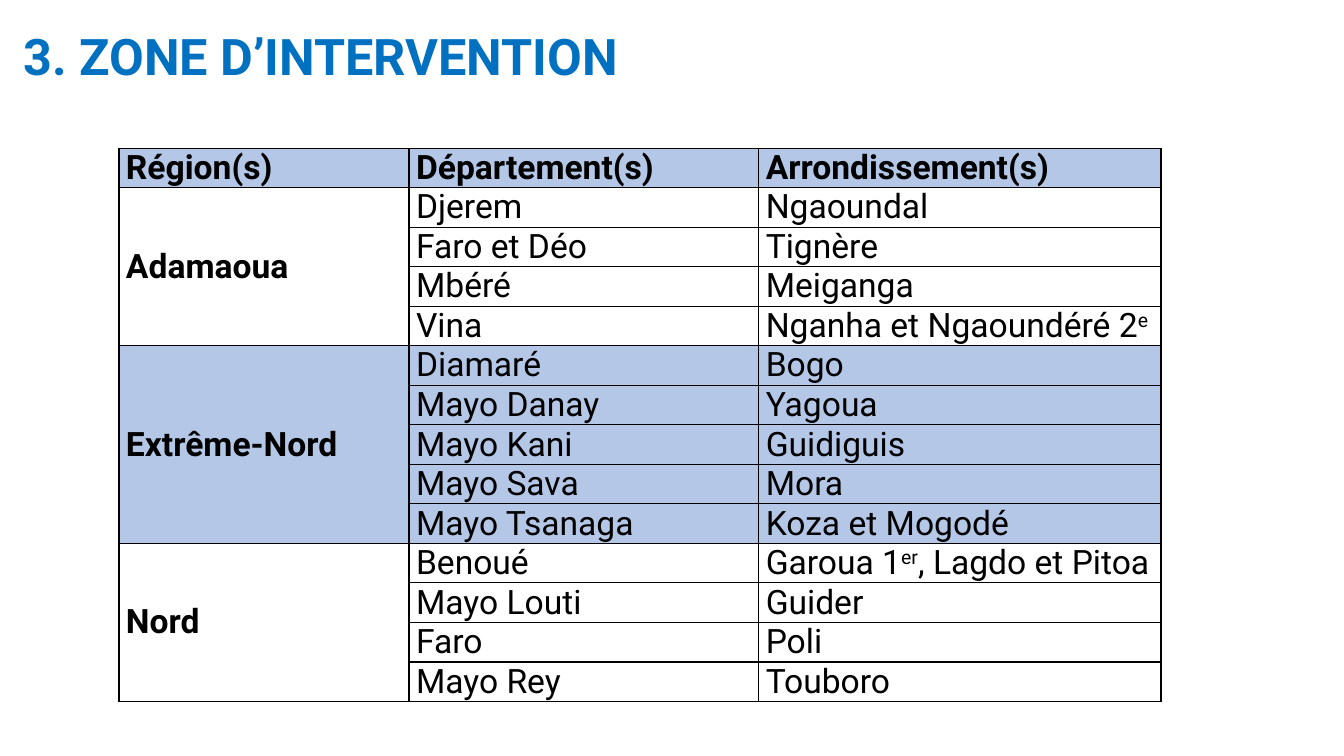
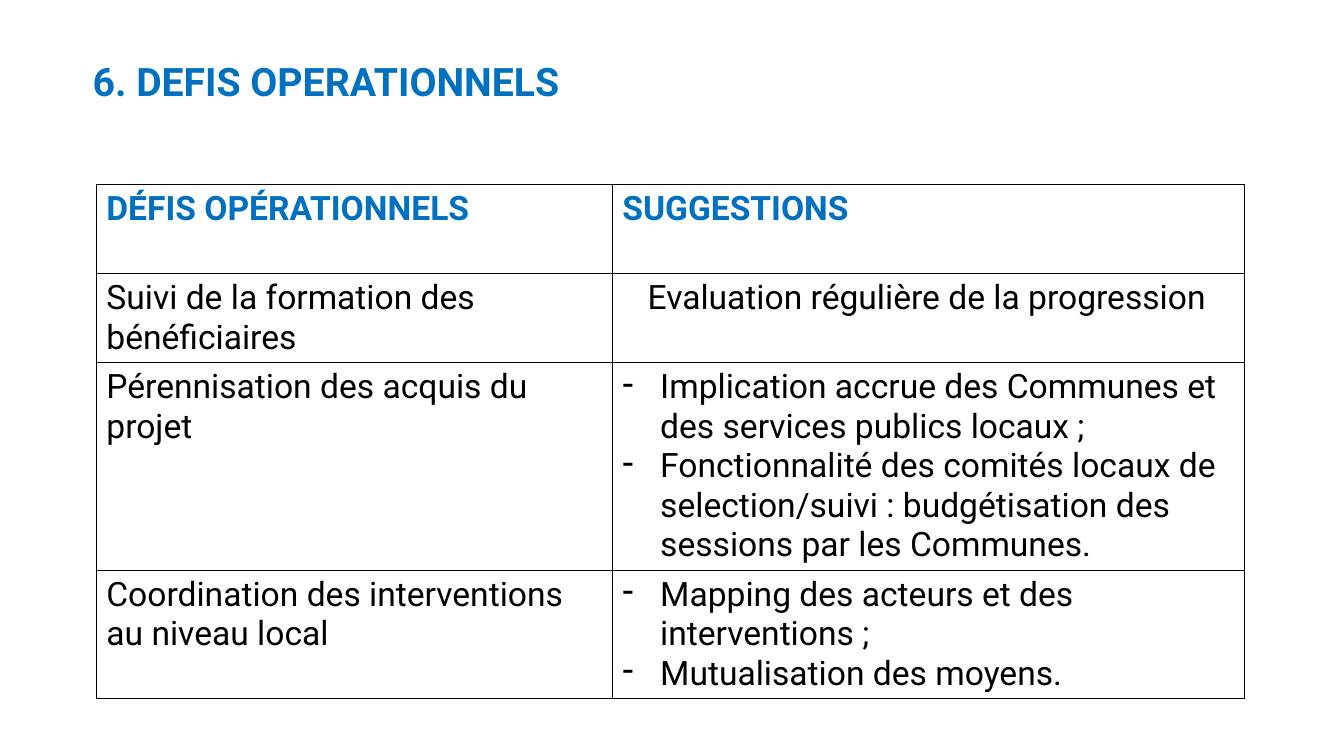
from dataclasses import dataclass

import lxml.etree
import pptx
import pptx.dml.color
import pptx.enum.text
import pptx.oxml
import pptx.oxml.ns
import pptx.util

Pt = pptx.util.Pt
RGBColor = pptx.dml.color.RGBColor
Anchor = pptx.enum.text.MSO_ANCHOR
qn = pptx.oxml.ns.qn


@dataclass(frozen=True)
class Theme:
    font: str = "Roboto"
    blue: RGBColor = RGBColor(0x00, 0x70, 0xC0)
    black: RGBColor = RGBColor(0x00, 0x00, 0x00)
    band: RGBColor = RGBColor(0xB4, 0xC7, 0xE7)
    title_size: int = 36
    subtitle_size: int = 28
    table_size: int = 24
    line_height: float = 28.2
    border: int = 1


theme = Theme()
TITLE_ONLY = 5


def add_table_slide(title_text, title_box, title_size, title_anchor, table_corner, widths, heights):
    """Add a slide with a blue title and an empty table; return the table."""
    slide = presentation.slides.add_slide(presentation.slide_layouts[TITLE_ONLY])
    title = slide.shapes.title
    title.left, title.top, title.width, title.height = map(Pt, title_box)
    title.text_frame.text = title_text
    title.text_frame.auto_size = pptx.enum.text.MSO_AUTO_SIZE.NONE
    title.text_frame.vertical_anchor = title_anchor
    paragraph = title.text_frame.paragraphs[0]
    paragraph.alignment = pptx.enum.text.PP_ALIGN.LEFT
    paragraph.line_spacing = 0.9
    font = paragraph.runs[0].font
    font.name, font.size, font.bold = theme.font, Pt(title_size), True
    font.color.rgb = theme.blue

    left, top = table_corner
    table = slide.shapes.add_table(
        len(heights), len(widths), Pt(left), Pt(top), Pt(sum(widths)), Pt(sum(heights))
    ).table
    for column, width in zip(table.columns, widths):
        column.width = Pt(width)
    for row, height in zip(table.rows, heights):
        row.height = Pt(height)
    return table


def fill_cell(cell, lines, bold=False, color=theme.black, fill=None, bulleted=False, indent=0):
    """Write and border a cell; in a line, every second part between | is superscript."""
    if fill is None:
        cell.fill.background()
    else:
        cell.fill.solid()
        cell.fill.fore_color.rgb = fill
    properties = cell._tc.get_or_add_tcPr()
    for position, side in enumerate(("lnL", "lnR", "lnT", "lnB")):
        line = lxml.etree.Element(qn(f"a:{side}"), w=str(Pt(theme.border)))
        solid = lxml.etree.SubElement(line, qn("a:solidFill"))
        lxml.etree.SubElement(solid, qn("a:srgbClr"), val=str(theme.black))
        properties.insert(position, line)

    cell.text_frame.text = "\n".join(line.replace("|", "") for line in lines)
    for paragraph, line in zip(cell.text_frame.paragraphs, lines):
        paragraph_properties = paragraph._p.get_or_add_pPr()
        if bulleted:
            paragraph_properties.set("marL", str(Pt(27)))
            paragraph_properties.set("indent", str(-Pt(27)))
            lxml.etree.SubElement(paragraph_properties, qn("a:buFontTx"))
            lxml.etree.SubElement(paragraph_properties, qn("a:buChar"), char="-")
        elif indent:
            paragraph_properties.set("marL", str(Pt(indent)))
        parts = line.split("|")
        paragraph.text = parts[0]
        for part in parts[1:]:
            paragraph.add_run().text = part
        for index, run in enumerate(paragraph.runs):
            run.font.name, run.font.size, run.font.bold = theme.font, Pt(theme.table_size), bold
            run.font.color.rgb = color
            if index % 2:
                run.font._element.set("baseline", "30000")


presentation = pptx.Presentation()
presentation.slide_width = Pt(960)
presentation.slide_height = Pt(540)

# Zone d'intervention
zone_headings = ["Région(s)", "Département(s)", "Arrondissement(s)"]
regions = {
    "Adamaoua": [
        ("Djerem", "Ngaoundal"),
        ("Faro et Déo", "Tignère"),
        ("Mbéré", "Meiganga"),
        ("Vina", "Nganha et Ngaoundéré 2|e"),
    ],
    "Extrême-Nord": [
        ("Diamaré", "Bogo"),
        ("Mayo Danay", "Yagoua"),
        ("Mayo Kani", "Guidiguis"),
        ("Mayo Sava", "Mora"),
        ("Mayo Tsanaga", "Koza et Mogodé"),
    ],
    "Nord": [
        ("Benoué", "Garoua 1|er|, Lagdo et Pitoa"),
        ("Mayo Louti", "Guider"),
        ("Faro", "Poli"),
        ("Mayo Rey", "Touboro"),
    ],
}
zone_row_count = 1 + sum(len(departments) for departments in regions.values())
zone_table = add_table_slide(
    "3. ZONE D’INTERVENTION", (9.4, 11.5, 603.4, 61.2), theme.title_size, Anchor.MIDDLE,
    (85, 105.8), [207.2, 249.8, 287.4], [theme.line_height] * zone_row_count,
)
for cell in zone_table.iter_cells():
    cell.margin_left = cell.margin_right = Pt(5)
    cell.margin_top = cell.margin_bottom = 0
for column, heading in enumerate(zone_headings):
    fill_cell(zone_table.cell(0, column), [heading], bold=True, fill=theme.band)
row = 1
for region_index, (region, departments) in enumerate(regions.items()):
    fill = theme.band if region_index % 2 else None
    first_row = row
    for department, districts in departments:
        fill_cell(zone_table.cell(row, 0), [region if row == first_row else ""], bold=True, fill=fill)
        fill_cell(zone_table.cell(row, 1), [department], fill=fill)
        fill_cell(zone_table.cell(row, 2), [districts], fill=fill)
        row += 1
    region_cell = zone_table.cell(first_row, 0)
    region_cell.merge(zone_table.cell(row - 1, 0))
    region_cell.vertical_anchor = Anchor.MIDDLE

# Défis opérationnels
challenge_headings = ["DÉFIS OPÉRATIONNELS", "SUGGESTIONS"]
challenges = [
    ("Suivi de la formation des bénéficiaires", ["Evaluation régulière de la progression"]),
    ("Pérennisation des acquis du projet", [
        "Implication accrue des Communes et des services publics locaux ;",
        "Fonctionnalité des comités locaux de selection/suivi : budgétisation des sessions par les Communes.",
    ]),
    ("Coordination des interventions au niveau local", [
        "Mapping des acteurs et des interventions ;",
        "Mutualisation des moyens.",
    ]),
]
line_counts = [2, 2, 5, 3]
challenge_table = add_table_slide(
    "6. DEFIS OPERATIONNELS", (59, 41, 392.4, 45.4), theme.subtitle_size, Anchor.TOP,
    (68.8, 131.8), [368.6, 451.4], [count * theme.line_height + 7.2 for count in line_counts],
)
for column, heading in enumerate(challenge_headings):
    fill_cell(challenge_table.cell(0, column), [heading], bold=True, color=theme.blue)
for row, (challenge, suggestions) in enumerate(challenges, start=1):
    fill_cell(challenge_table.cell(row, 0), [challenge])
    fill_cell(challenge_table.cell(row, 1), suggestions, bulleted=len(suggestions) > 1, indent=18)

presentation.save("out.pptx")
